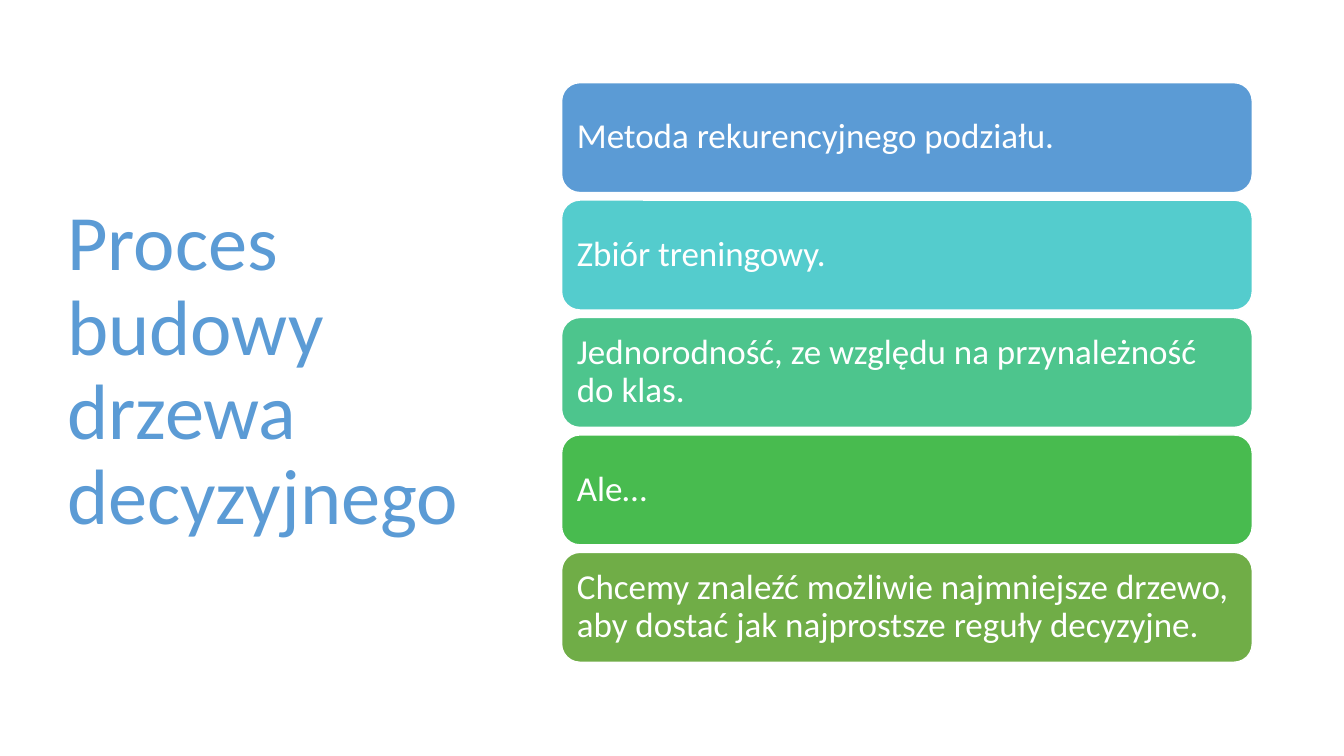
from dataclasses import dataclass

from pptx import Presentation
from pptx.dml.color import RGBColor
from pptx.enum import shapes, text
from pptx.util import Inches, Pt


@dataclass(frozen=True)
class Theme:
    font: str = "Calibri"
    title_size: int = 56
    step_size: int = 25
    title_color: str = "5B9BD5"
    white: str = "FFFFFF"
    step_colors: tuple = ("5B9BD5", "54CCCD", "4DC58D", "48BB4F", "70AD47")
    line_spacing: float = 0.9


STEPS = (
    "Metoda rekurencyjnego podziału.",
    "Zbiór treningowy.",
    "Jednorodność, ze względu na przynależność do klas.",
    "Ale…",
    "Chcemy znaleźć możliwie najmniejsze drzewo, "
    "aby dostać jak najprostsze reguły decyzyjne.",
)
STEP_LEFT, STEP_TOP, STEP_WIDTH, STEP_HEIGHT = 5.57, 0.82, 6.85, 1.09
STEP_GAP = 0.075


class SlideBuilder:
    def __init__(self, slide, theme):
        self.slide = slide
        self.theme = theme

    def set_text(self, shape, wording, size, color):
        """Fill a shape with one left-aligned, vertically centred paragraph."""
        frame = shape.text_frame
        frame.word_wrap = True
        frame.vertical_anchor = text.MSO_ANCHOR.MIDDLE
        paragraph = frame.paragraphs[0]
        paragraph.text = wording
        paragraph.alignment = text.PP_ALIGN.LEFT
        paragraph.line_spacing = self.theme.line_spacing
        paragraph.font.name = self.theme.font
        paragraph.font.size = Pt(size)
        paragraph.font.color.rgb = RGBColor.from_string(color)

    def title(self, wording, *box):
        shape = self.slide.shapes.add_textbox(*map(Inches, box))
        self.set_text(shape, wording, self.theme.title_size, self.theme.title_color)

    def step(self, wording, color, *box):
        shape = self.slide.shapes.add_shape(
            shapes.MSO_SHAPE.ROUNDED_RECTANGLE, *map(Inches, box))
        shape.shadow.inherit = False
        shape.fill.solid()
        shape.fill.fore_color.rgb = RGBColor.from_string(color)
        shape.line.color.rgb = RGBColor.from_string(self.theme.white)
        shape.line.width = Pt(1)
        frame = shape.text_frame
        frame.margin_left = frame.margin_right = Inches(0.1)
        frame.margin_top = frame.margin_bottom = Inches(0.1)
        self.set_text(shape, wording, self.theme.step_size, self.theme.white)


def main():
    presentation = Presentation()
    presentation.slide_width = Inches(13.33)
    presentation.slide_height = Inches(7.5)
    slide = presentation.slides.add_slide(presentation.slide_layouts[6])
    theme = Theme()
    builder = SlideBuilder(slide, theme)

    builder.title("Proces budowy drzewa decyzyjnego", 0.57, 0.68, 4.16, 6.02)
    for index, (wording, color) in enumerate(zip(STEPS, theme.step_colors)):
        top = STEP_TOP + index * (STEP_HEIGHT + STEP_GAP)
        builder.step(wording, color, STEP_LEFT, top, STEP_WIDTH, STEP_HEIGHT)

    presentation.save("out.pptx")


if __name__ == "__main__":
    main()
